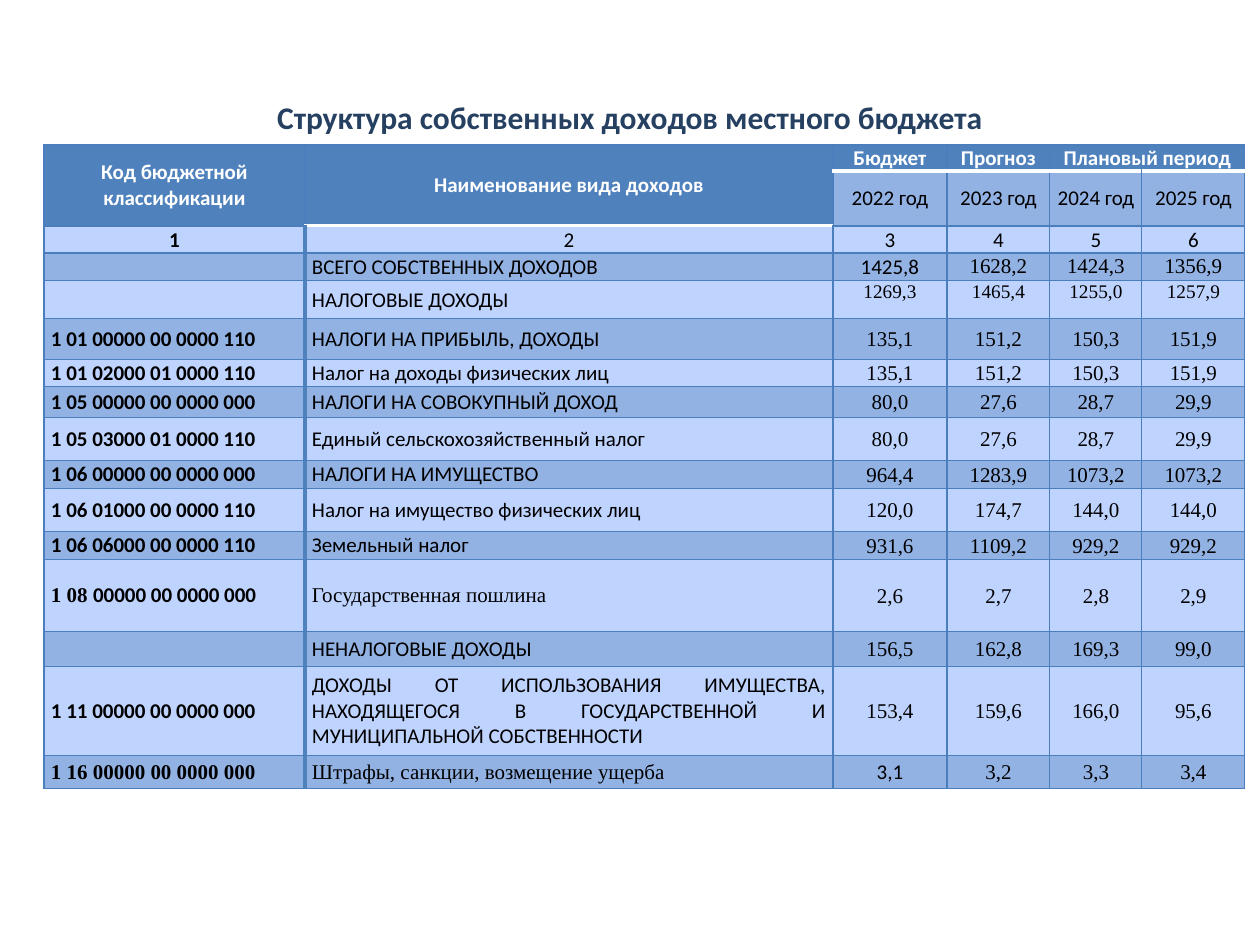
from lxml import etree
from pptx import Presentation, util as u
from pptx.dml.color import RGBColor
from pptx.enum import text
from pptx.oxml import ns

EMU_PER_PX = 914400 / 126

NAVY = RGBColor(0x25, 0x40, 0x61)
BLUE = RGBColor(0x4F, 0x81, 0xBD)
GRID = RGBColor(0x4B, 0x7E, 0xBC)
DARK_BAND = RGBColor(0x93, 0xB2, 0xE4)
LIGHT_BAND = RGBColor(0xBF, 0xD3, 0xFF)
WHITE = RGBColor(0xFF, 0xFF, 0xFF)
BLACK = RGBColor(0x00, 0x00, 0x00)

SANS = "Calibri"
SERIF = "Times New Roman"
LEFT, CENTER, JUSTIFY = text.PP_ALIGN.LEFT, text.PP_ALIGN.CENTER, text.PP_ALIGN.JUSTIFY
TOP, MIDDLE, BOTTOM = text.MSO_ANCHOR.TOP, text.MSO_ANCHOR.MIDDLE, text.MSO_ANCHOR.BOTTOM

COLUMN_WIDTHS = [261, 528, 114, 103, 92, 103]
ROW_HEIGHTS = [26, 55, 27, 28, 38, 41, 27, 31, 43, 28, 43, 28, 72, 35, 89, 33]
CODE, NAME = 0, 1
FIRST_INCOME_ROW = 3
TAX_TOTAL_ROW = 4
FIRST_TIGHT_ROW, LAST_TIGHT_ROW = 5, 14

HEADER_ROWS = [
    ["Код бюджетной классификации", "Наименование вида доходов",
     "Бюджет", "Прогноз", "Плановый период", ""],
    ["", "", "2022 год", "2023 год", "2024 год", "2025 год"],
    ["1", "2", "3", "4", "5", "6"],
]
INCOME_ROWS = [
    ["", "ВСЕГО СОБСТВЕННЫХ ДОХОДОВ", "1425,8", "1628,2", "1424,3", "1356,9"],
    ["", "НАЛОГОВЫЕ ДОХОДЫ", "1269,3", "1465,4", "1255,0", "1257,9"],
    ["1 01 00000 00 0000 110", "НАЛОГИ НА ПРИБЫЛЬ, ДОХОДЫ",
     "135,1", "151,2", "150,3", "151,9"],
    ["1 01 02000 01 0000 110", "Налог на доходы физических лиц",
     "135,1", "151,2", "150,3", "151,9"],
    ["1 05 00000 00 0000 000", "НАЛОГИ НА СОВОКУПНЫЙ ДОХОД",
     "80,0", "27,6", "28,7", "29,9"],
    ["1 05 03000 01 0000 110", "Единый сельскохозяйственный налог",
     "80,0", "27,6", "28,7", "29,9"],
    ["1 06 00000 00 0000 000", "НАЛОГИ НА ИМУЩЕСТВО",
     "964,4", "1283,9", "1073,2", "1073,2"],
    ["1 06 01000 00 0000 110", "Налог на имущество физических лиц",
     "120,0", "174,7", "144,0", "144,0"],
    ["1 06 06000 00 0000 110", "Земельный налог",
     "931,6", "1109,2", "929,2", "929,2"],
    ["1 08 00000 00 0000 000", "Государственная пошлина", "2,6", "2,7", "2,8", "2,9"],
    ["", "НЕНАЛОГОВЫЕ ДОХОДЫ", "156,5", "162,8", "169,3", "99,0"],
    ["1 11 00000 00 0000 000",
     "ДОХОДЫ ОТ ИСПОЛЬЗОВАНИЯ ИМУЩЕСТВА, НАХОДЯЩЕГОСЯ В ГОСУДАРСТВЕННОЙ "
     "И МУНИЦИПАЛЬНОЙ СОБСТВЕННОСТИ", "153,4", "159,6", "166,0", "95,6"],
    ["1 16 00000 00 0000 000", "Штрафы, санкции, возмещение ущерба",
     "3,1", "3,2", "3,3", "3,4"],
]
# Cells whose typeface departs from that of their column
SERIF_LABELS = {"Государственная пошлина", "1 16 00000 00 0000 000",
                "Штрафы, санкции, возмещение ущерба"}
SANS_VALUES = {"1425,8", "3,1"}
MIXED_RUNS = {"1 08 00000 00 0000 000": [("1 08 ", SERIF), ("00000 00 0000 000", SANS)]}


def px(length):
    return u.Emu(round(length * EMU_PER_PX))


def add_run(paragraph, words, font, size, color, bold):
    run = paragraph.add_run()
    run.text = words
    run.font.name = font
    run.font.size = u.Pt(size)
    run.font.color.rgb = color
    run.font.bold = bold


def set_border(cell, side, color, width):
    """Draw one side (L, R, T or B) of a cell."""
    properties = cell._tc.get_or_add_tcPr()
    line = etree.Element(ns.qn("a:ln" + side), w=str(u.Pt(width)))
    fill = etree.SubElement(line, ns.qn("a:solidFill"))
    etree.SubElement(fill, ns.qn("a:srgbClr"), val=str(color))
    # Borders precede the fill, in the order L, R, T, B
    properties.insert("LRTB".index(side), line)


def border_styles(row, column):
    """Colour and width of each side; neighbours agree on a shared edge."""
    styles = {side: (GRID, 0.75) for side in "LRTB"}
    white_below = {(0, c) for c in range(2, 6)} | {(1, NAME)}
    if (row, column) in white_below or (row, column) == (0, NAME):
        styles["B"] = (WHITE, 2)
    if (row - 1, column) in white_below:
        styles["T"] = (WHITE, 2)
    if row >= 2 and column == CODE:
        styles["R"] = (BLUE, 2)
    if row >= 2 and column == NAME:
        styles["L"] = (BLUE, 2)
    return styles


def cell_runs(words, row, column):
    if words in MIXED_RUNS:
        return MIXED_RUNS[words]
    is_value = row >= FIRST_INCOME_ROW and column > NAME
    is_serif = words not in SANS_VALUES if is_value else words in SERIF_LABELS
    return [(words, SERIF if is_serif else SANS)]


def fill_cell(cell, words, row, column):
    is_header = row == 0 or (row == 1 and column <= NAME)
    is_income = row >= FIRST_INCOME_ROW
    is_value = is_income and column > NAME
    is_tax_total = row == TAX_TOTAL_ROW and is_value

    # Fill, margins and borders
    cell.fill.solid()
    cell.fill.fore_color.rgb = BLUE if is_header else DARK_BAND if row % 2 else LIGHT_BAND
    is_tight = is_value and FIRST_TIGHT_ROW <= row <= LAST_TIGHT_ROW
    cell.margin_left = cell.margin_right = px(1 if is_tight else 7)
    cell.margin_top = px(1 if is_tight else 0)
    cell.margin_bottom = 0
    bottom = row == 2 or (row == 0 and column > 2)
    cell.vertical_anchor = TOP if is_tax_total else BOTTOM if bottom else MIDDLE
    for side, (color, width) in border_styles(row, column).items():
        set_border(cell, side, color, width)

    # Text
    paragraph = cell.text_frame.paragraphs[0]
    paragraph.alignment = JUSTIFY if is_income and column <= NAME else CENTER
    if not words:
        etree.SubElement(paragraph._p, ns.qn("a:endParaRPr"), sz="1200")
        return
    bold = is_header or (row >= 2 and column == CODE)
    for run_words, font in cell_runs(words, row, column):
        add_run(paragraph, run_words, font, 11 if is_tax_total else 12,
                WHITE if is_header else BLACK, bold)


def add_title(slide, left, top, width, height):
    frame = slide.shapes.add_textbox(px(left), px(top), px(width), px(height)).text_frame
    frame.word_wrap = True
    frame.vertical_anchor = MIDDLE
    paragraph = frame.paragraphs[0]
    paragraph.alignment = CENTER
    add_run(paragraph, "Структура собственных доходов местного бюджета",
            SANS, 18, NAVY, True)


def add_income_table(slide, left, top):
    rows = HEADER_ROWS + INCOME_ROWS
    table = slide.shapes.add_table(
        len(rows), len(COLUMN_WIDTHS), px(left), px(top),
        px(sum(COLUMN_WIDTHS)), px(sum(ROW_HEIGHTS))).table
    table.first_row = table.horz_banding = False
    for column, width in zip(table.columns, COLUMN_WIDTHS):
        column.width = px(width)
    for row, height in zip(table.rows, ROW_HEIGHTS):
        row.height = px(height)

    # Header spans
    for column in (CODE, NAME):
        table.cell(0, column).merge(table.cell(1, column))
    table.cell(0, 4).merge(table.cell(0, 5))

    for row, entries in enumerate(rows):
        for column, words in enumerate(entries):
            fill_cell(table.cell(row, column), words, row, column)


def main():
    presentation = Presentation()
    presentation.slide_width, presentation.slide_height = px(1260), px(945)
    slide = presentation.slides.add_slide(presentation.slide_layouts[6])
    add_title(slide, 63, 38, 1134, 158)
    add_income_table(slide, 44, 145)
    presentation.save("out.pptx")


if __name__ == "__main__":
    main()
